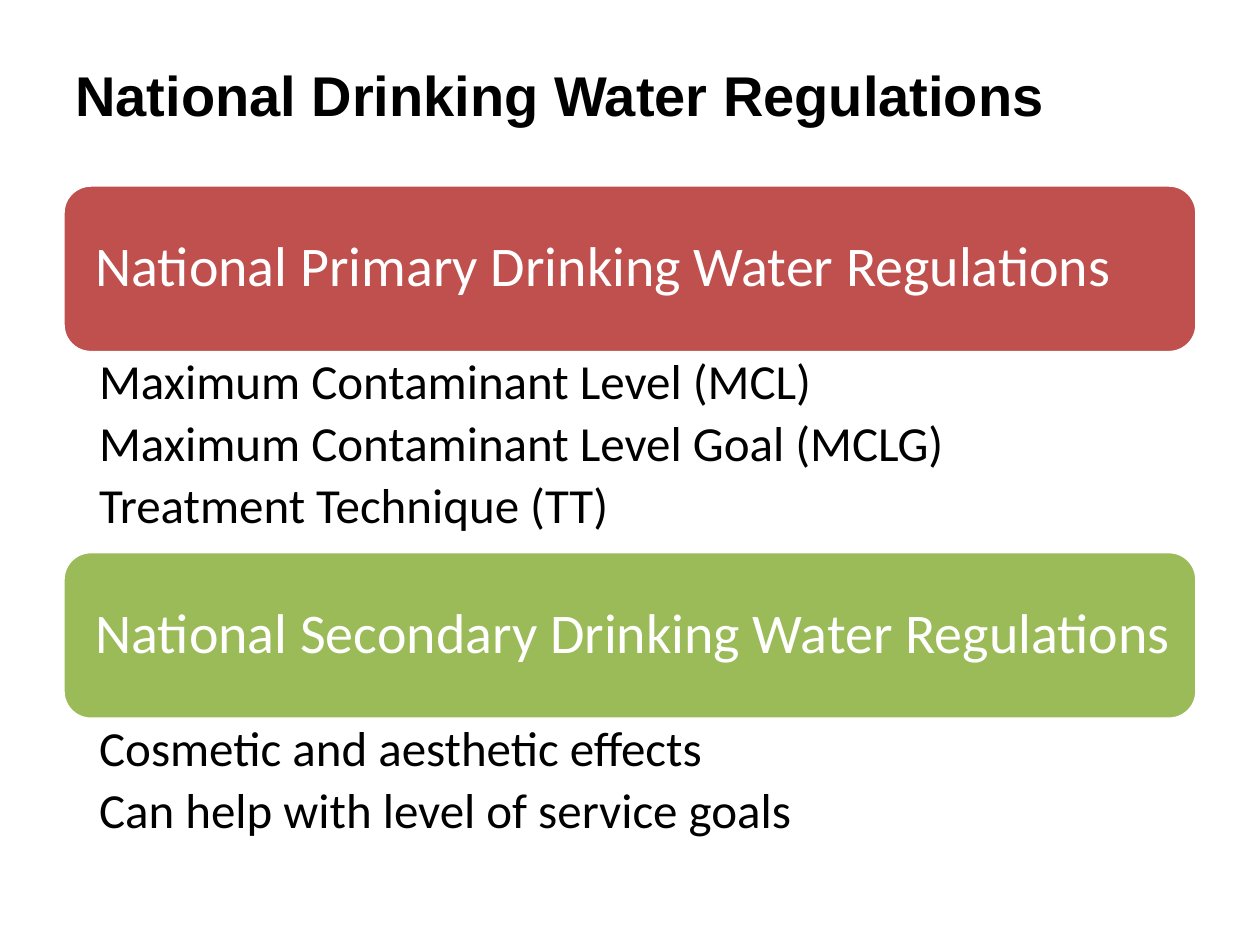
from pptx import Presentation
from pptx.dml.color import RGBColor
from pptx.enum.shapes import MSO_SHAPE
from pptx.enum.text import MSO_ANCHOR, PP_ALIGN
from pptx.util import Cm, Pt

TITLE = "National Drinking Water Regulations"
SECTIONS = [
    ("National Primary Drinking Water Regulations", "red", 4.01, [
        "Maximum Contaminant Level (MCL)",
        "Maximum Contaminant Level Goal (MCLG)",
        "Treatment Technique (TT)",
    ]),
    ("National Secondary Drinking Water Regulations", "green", 3.0, [
        "Cosmetic and aesthetic effects",
        "Can help with level of service goals",
    ]),
]
COLORS = {"red": "C0504D", "green": "9BBB59", "white": "FFFFFF", "black": "000000"}
LEFT, WIDTH = 1.27, 22.86
FIRST_TOP, BANNER_HEIGHT = 3.73, 3.38


def color(name):
    return RGBColor.from_string(COLORS[name])


def write_lines(shape, lines, size, color_name, anchor, insets, font="Calibri",
                bold=False, spacing=0.9, after=0):
    frame = shape.text_frame
    frame.word_wrap = True
    frame.vertical_anchor = anchor
    frame.margin_left, frame.margin_top, frame.margin_right, frame.margin_bottom = map(Cm, insets)
    frame.text = "\n".join(lines)
    for paragraph in frame.paragraphs:
        paragraph.alignment = PP_ALIGN.LEFT
        paragraph.line_spacing = spacing
        paragraph.space_after = Pt(after)
        paragraph.font.name = font
        paragraph.font.size = Pt(size)
        paragraph.font.bold = bold
        paragraph.font.color.rgb = color(color_name)


def add_banner(slide, text, fill, top):
    banner = slide.shapes.add_shape(MSO_SHAPE.ROUNDED_RECTANGLE, Cm(LEFT), Cm(top),
                                    Cm(WIDTH), Cm(BANNER_HEIGHT))
    banner.shadow.inherit = False
    banner.fill.solid()
    banner.fill.fore_color.rgb = color(fill)
    banner.line.color.rgb = color("white")
    banner.line.width = Pt(2)
    write_lines(banner, [text], 32, "white", MSO_ANCHOR.MIDDLE, (0.49, 0.5, 0.2, 0.5))


def add_details(slide, lines, top, height):
    details = slide.shapes.add_textbox(Cm(LEFT), Cm(top), Cm(WIDTH), Cm(height))
    write_lines(details, lines, 28, "black", MSO_ANCHOR.TOP, (0.73, 0.1, 0.56, 0.1), after=5)


def main():
    presentation = Presentation()
    presentation.slide_width, presentation.slide_height = Cm(25.4), Cm(19.05)
    slide = presentation.slides.add_slide(presentation.slide_layouts[5])

    title = slide.shapes.title
    title.left, title.top, title.width, title.height = Cm(LEFT), Cm(0.3), Cm(WIDTH), Cm(3.18)
    write_lines(title, [TITLE], 32, "black", MSO_ANCHOR.MIDDLE, (0.25, 0.13, 0.25, 0.13),
                font="Arial", bold=True, spacing=1.0)

    top = FIRST_TOP
    for heading, fill, height, lines in SECTIONS:
        add_banner(slide, heading, fill, top)
        add_details(slide, lines, top + BANNER_HEIGHT, height)
        top += BANNER_HEIGHT + height

    presentation.save("out.pptx")


if __name__ == "__main__":
    main()
